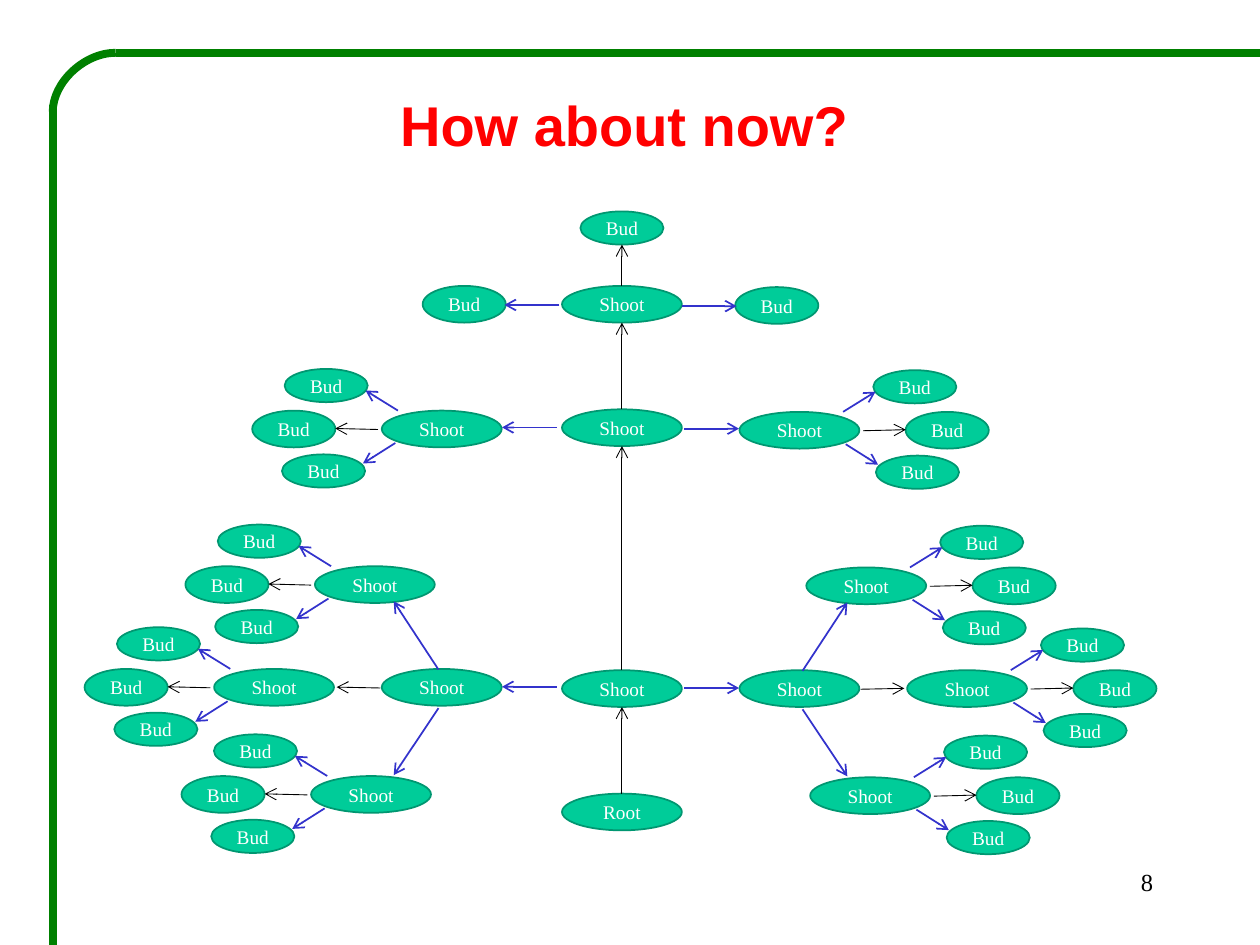
from lxml import etree
from pptx import Presentation
from pptx.dml.color import RGBColor
from pptx.enum.shapes import MSO_CONNECTOR, MSO_SHAPE
from pptx.enum.text import MSO_ANCHOR, PP_ALIGN
from pptx.oxml.ns import qn
from pptx.util import Pt

STRAIGHT, CURVE = MSO_CONNECTOR.STRAIGHT, MSO_CONNECTOR.CURVE
OVAL = MSO_SHAPE.OVAL
MIDDLE = MSO_ANCHOR.MIDDLE
CENTER, RIGHT = PP_ALIGN.CENTER, PP_ALIGN.RIGHT

RED = RGBColor(0xFF, 0x00, 0x00)
GREEN = RGBColor(0x00, 0x80, 0x00)
TEAL = RGBColor(0x00, 0xCC, 0x99)
DARK_TEAL = RGBColor(0x00, 0x97, 0x71)
BLUE = RGBColor(0x33, 0x33, 0xCC)
BLACK = RGBColor(0x00, 0x00, 0x00)
WHITE = RGBColor(0xFF, 0xFF, 0xFF)

TITLE = "How about now?"
PAGE_NUMBER = "8"
AXIS = 354.6
TILT = 0.35
SHOOT_SIZE = (68.5, 21)
BUD_SIZE = (47.5, 21)
SMALL_BUD_SIZE = (47.5, 19)

TRUNK_X = 355.4
TRUNK = [
    ("Root", 464, SHOOT_SIZE),
    ("Shoot", 393.5, SHOOT_SIZE),
    ("Shoot", 244.4, SHOOT_SIZE),
    ("Shoot", 173.9, SHOOT_SIZE),
    ("Bud", 130.3, SMALL_BUD_SIZE),
]
TOP_BUDS = (89.3, 174.2)
LIMB_SHOOTS = [(102.2, 245.5), (102.2, 393.1)]
FAN_SHOOTS = [(102.2, 245.5), (140.4, 334.4), (198, 393.1), (142.6, 454.3)]
FAN_BUDS = [
    (66, -24.8, SMALL_BUD_SIZE),
    (84.5, 0, BUD_SIZE),
    (67.5, 24, SMALL_BUD_SIZE),
]
FAN_ARROWS = [
    ((25, -10.5), (43.5, -22), BLUE),
    ((36.4, 0.3), (60.8, -0.3), BLACK),
    ((26.5, 8), (45, 19.7), BLUE),
]
LIMB_ARROWS = [
    ((35, 174.6), (66.3, 174.6), BLUE),
    ((36.4, 244.6), (67.7, 244.6), BLUE),
    ((36.4, 392.8), (67.7, 392.8), BLUE),
    ((104, 383), (129.6, 344), BLUE),
    ((104, 405), (129.6, 443.3), BLUE),
    ((137.2, 393.5), (162.2, 393), BLACK),
]
FRAME = [
    (STRAIGHT, (720, 30.2), (66.2, 30.2)),
    (STRAIGHT, (30.2, 60), (30.2, 540)),
    (CURVE, (66.2, 30.2), (30.2, 64)),
]


def add_line(page, kind, start, end, color, width):
    line = page.shapes.add_connector(kind, *(Pt(v) for v in (*start, *end)))
    line.line.color.rgb = color
    line.line.width = Pt(width)
    etree.SubElement(line.element.spPr, qn("a:effectLst"))
    return line


def add_arrow(page, start, end, color):
    arrow = add_line(page, STRAIGHT, start, end, color, 1 if color == BLUE else 0.5)
    etree.SubElement(arrow.line._get_or_add_ln(), qn("a:tailEnd"), type="arrow")


def write(frame, text, font, size, color, align, bold=False):
    frame.text = text
    para = frame.paragraphs[0]
    para.alignment = align
    span = para.runs[0].font
    span.name, span.size, span.bold = font, Pt(size), bold
    span.color.rgb = color


def add_node(page, label, x, y, size):
    width, height = size
    node = page.shapes.add_shape(
        OVAL, Pt(x - width / 2), Pt(y - height / 2), Pt(width), Pt(height))
    node.shadow.inherit = False
    node.fill.solid()
    node.fill.fore_color.rgb = TEAL
    node.line.color.rgb = DARK_TEAL
    node.line.width = Pt(1)
    frame = node.text_frame
    frame.margin_left = frame.margin_right = frame.margin_top = frame.margin_bottom = 0
    frame.vertical_anchor = MIDDLE
    frame.word_wrap = False
    write(frame, label, "Times New Roman", 11, WHITE, CENTER)


def add_trunk(page):
    for label, y, size in TRUNK:
        add_node(page, label, TRUNK_X, y, size)
    for (_, low, low_size), (_, high, high_size) in zip(TRUNK, TRUNK[1:]):
        add_arrow(page, (TRUNK_X, low - low_size[1] / 2),
                  (TRUNK_X, high + high_size[1] / 2), BLACK)


def add_side(page, side):
    def place(point):
        return AXIS + side * point[0], point[1] + side * TILT

    add_node(page, "Bud", *place(TOP_BUDS), BUD_SIZE)
    for shoot in dict.fromkeys(LIMB_SHOOTS + FAN_SHOOTS):
        add_node(page, "Shoot", *place(shoot), SHOOT_SIZE)
    for x, y in FAN_SHOOTS:
        for dx, dy, size in FAN_BUDS:
            add_node(page, "Bud", *place((x + dx, y + dy)), size)
        for start, end, color in FAN_ARROWS:
            add_arrow(page, place((x + start[0], y + start[1])),
                      place((x + end[0], y + end[1])), color)
    for start, end, color in LIMB_ARROWS:
        add_arrow(page, place(start), place(end), color)


def main():
    deck = Presentation()
    deck.slide_width, deck.slide_height = Pt(720), Pt(540)
    page = deck.slides.add_slide(deck.slide_layouts[5])

    for kind, start, end in FRAME:
        line = add_line(page, kind, start, end, GREEN, 4.5)
        if kind == CURVE:
            line.element.spPr.find(qn("a:prstGeom")).set("prst", "curvedConnector2")

    title = page.shapes.title
    title.left, title.top, title.width, title.height = Pt(212.4), Pt(26), Pt(288.7), Pt(90)
    title.text_frame.vertical_anchor = MIDDLE
    title.text_frame.word_wrap = False
    write(title.text_frame, TITLE, "Arial", 32, RED, CENTER, True)

    add_trunk(page)
    for side in (-1, 1):
        add_side(page, side)

    box = page.shapes.add_textbox(Pt(516.2), Pt(491.8), Pt(149.8), Pt(36))
    box.text_frame.word_wrap = True
    write(box.text_frame, PAGE_NUMBER, "Times New Roman", 14, BLACK, RIGHT)
    deck.save("out.pptx")


if __name__ == "__main__":
    main()
